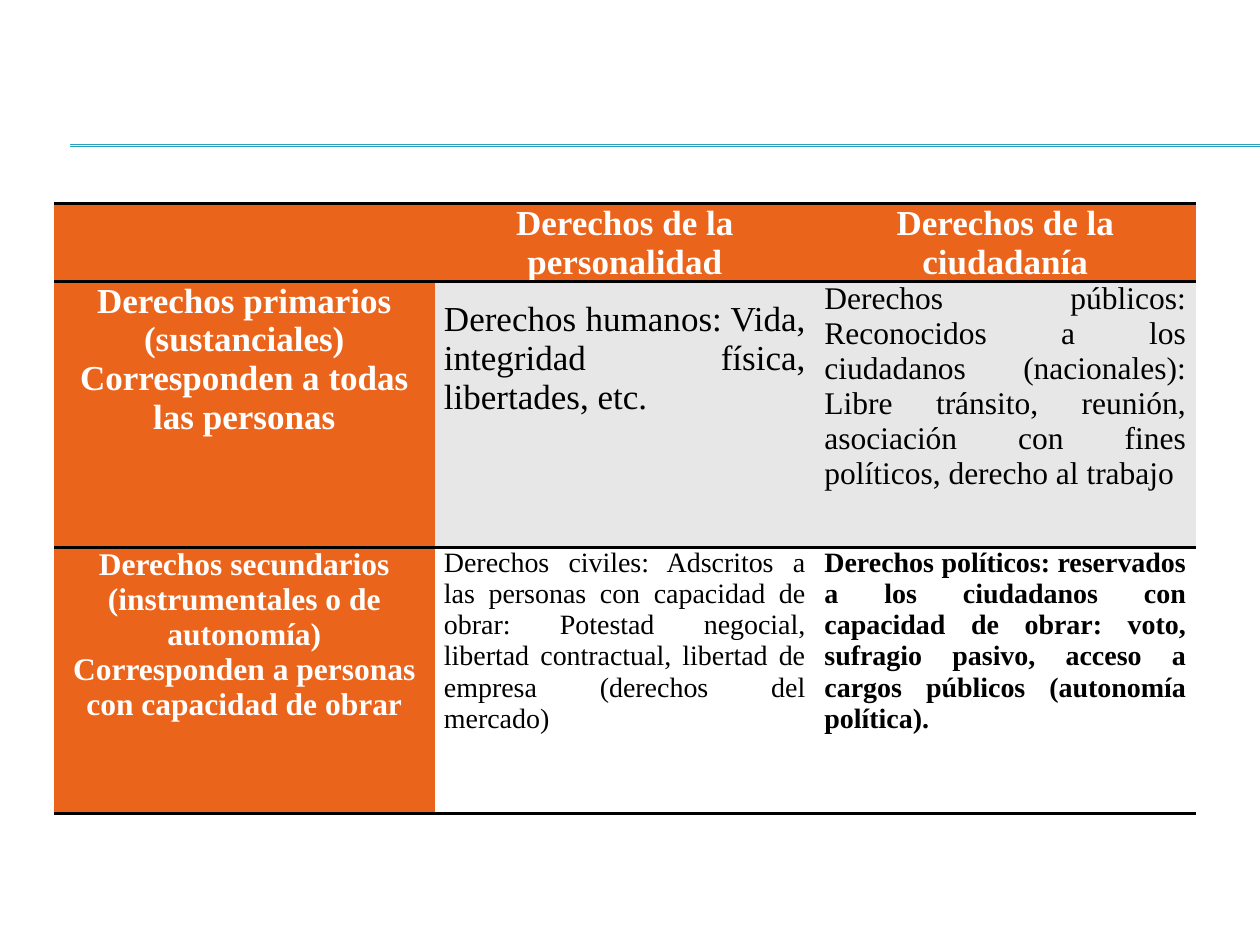
from lxml.etree import SubElement
from pptx import Presentation
from pptx.dml.color import RGBColor
from pptx.enum.shapes import MSO_CONNECTOR
from pptx.enum.text import PP_ALIGN
from pptx.oxml import parse_xml
from pptx.oxml.ns import nsdecls, qn
from pptx.util import Cm, Pt

ORANGE = RGBColor(0xEB, 0x64, 0x1B)
GREY = RGBColor(0xE7, 0xE7, 0xE7)
WHITE = RGBColor(0xFF, 0xFF, 0xFF)
BLACK = RGBColor(0, 0, 0)
TEAL = RGBColor(0x2D, 0xA2, 0xBF)
FONT = "Times New Roman"
PLAIN_STYLE = "{2D5ABB26-0587-4C30-8999-92F81FD0307C}"
ROW_HEIGHTS = (Cm(1.57), Cm(5.36), Cm(5.36))

# Each cell: paragraphs, size in points, bold
RIGHTS = [
    [
        ([], 20, True),
        (["Derechos de la personalidad"], 20, True),
        (["Derechos de la ciudadanía"], 20, True),
    ],
    [
        (["Derechos primarios (sustanciales)",
          "Corresponden a todas las personas"], 20, True),
        (["Derechos humanos: Vida, integridad física, libertades, etc."], 20, False),
        (["Derechos públicos: Reconocidos a los ciudadanos (nacionales): "
          "Libre tránsito, reunión, asociación con fines políticos, "
          "derecho al trabajo"], 18, False),
    ],
    [
        (["Derechos secundarios (instrumentales o de autonomía)",
          "Corresponden a personas con capacidad de obrar"], 18, True),
        (["Derechos civiles: Adscritos a las personas con capacidad de obrar: "
          "Potestad negocial, libertad contractual, libertad de empresa "
          "(derechos del mercado)"], 16, False),
        (["Derechos políticos: reservados a los ciudadanos con capacidad de "
          "obrar: voto, sufragio pasivo, acceso a cargos públicos "
          "(autonomía política)."], 16, True),
    ],
]


def add_rule(page, left, top, width):
    """Draw the double hairline under the title area."""
    for y in (top, top + Cm(0.03)):
        rule = page.shapes.add_connector(
            MSO_CONNECTOR.STRAIGHT, left, y, left + width, y)
        rule.line.color.rgb = TEAL
        rule.line.width = Pt(0.75)
        SubElement(rule._element.spPr, qn("a:effectLst"))


def add_border(cell, side):
    """Add a black 2 pt edge; side is lnT or lnB."""
    edge = parse_xml(
        f'<a:{side} {nsdecls("a")} w="{Pt(2)}"><a:solidFill>'
        f'<a:srgbClr val="{BLACK}"/></a:solidFill></a:{side}>')
    properties = cell._tc.get_or_add_tcPr()
    position = sum(child.tag == qn("a:lnT") for child in properties)
    properties.insert(position, edge)


def fill_cell(cell, paragraphs, size, bold, is_heading, color):
    cell.fill.solid()
    cell.fill.fore_color.rgb = color
    cell.margin_left = cell.margin_right = Cm(0.19)
    cell.margin_top = cell.margin_bottom = 0
    cell.text = "\n".join(paragraphs)
    for para in cell.text_frame.paragraphs:
        para.alignment = PP_ALIGN.CENTER if is_heading else PP_ALIGN.JUSTIFY
        para.font.name = FONT
        para.font.size = Pt(size)
        para.font.bold = bold
        para.font.color.rgb = WHITE if is_heading else BLACK


def add_rights_table(page, left, top, width):
    """Fill the matrix of rights and frame its rows."""
    frame = page.shapes.add_table(
        len(RIGHTS), len(RIGHTS[0]), left, top, width, sum(ROW_HEIGHTS))
    table = frame.table
    table._tbl.tblPr.find(qn("a:tableStyleId")).text = PLAIN_STYLE
    for row, height in zip(table.rows, ROW_HEIGHTS):
        row.height = height
    for r, row in enumerate(RIGHTS):
        for c, (paragraphs, size, bold) in enumerate(row):
            is_heading = r == 0 or c == 0
            color = ORANGE if is_heading else GREY if r == 1 else WHITE
            cell = table.cell(r, c)
            fill_cell(cell, paragraphs, size, bold, is_heading, color)
            # Lines above and below the header, and below the last row
            if r < 2:
                add_border(cell, "lnT")
            if r != 1:
                add_border(cell, "lnB")
    # The human rights text sits a little lower than its neighbours
    table.cell(1, 1).margin_top = Cm(0.37)


def main():
    deck = Presentation()
    deck.slide_width, deck.slide_height = Cm(25.4), Cm(19.05)
    page = deck.slides.add_slide(deck.slide_layouts[6])
    rule_left = Cm(1.42)
    add_rule(page, rule_left, Cm(2.92), deck.slide_width - rule_left)
    add_rights_table(page, Cm(1.09), Cm(4.11), Cm(23.01))
    deck.save("out.pptx")


if __name__ == "__main__":
    main()
